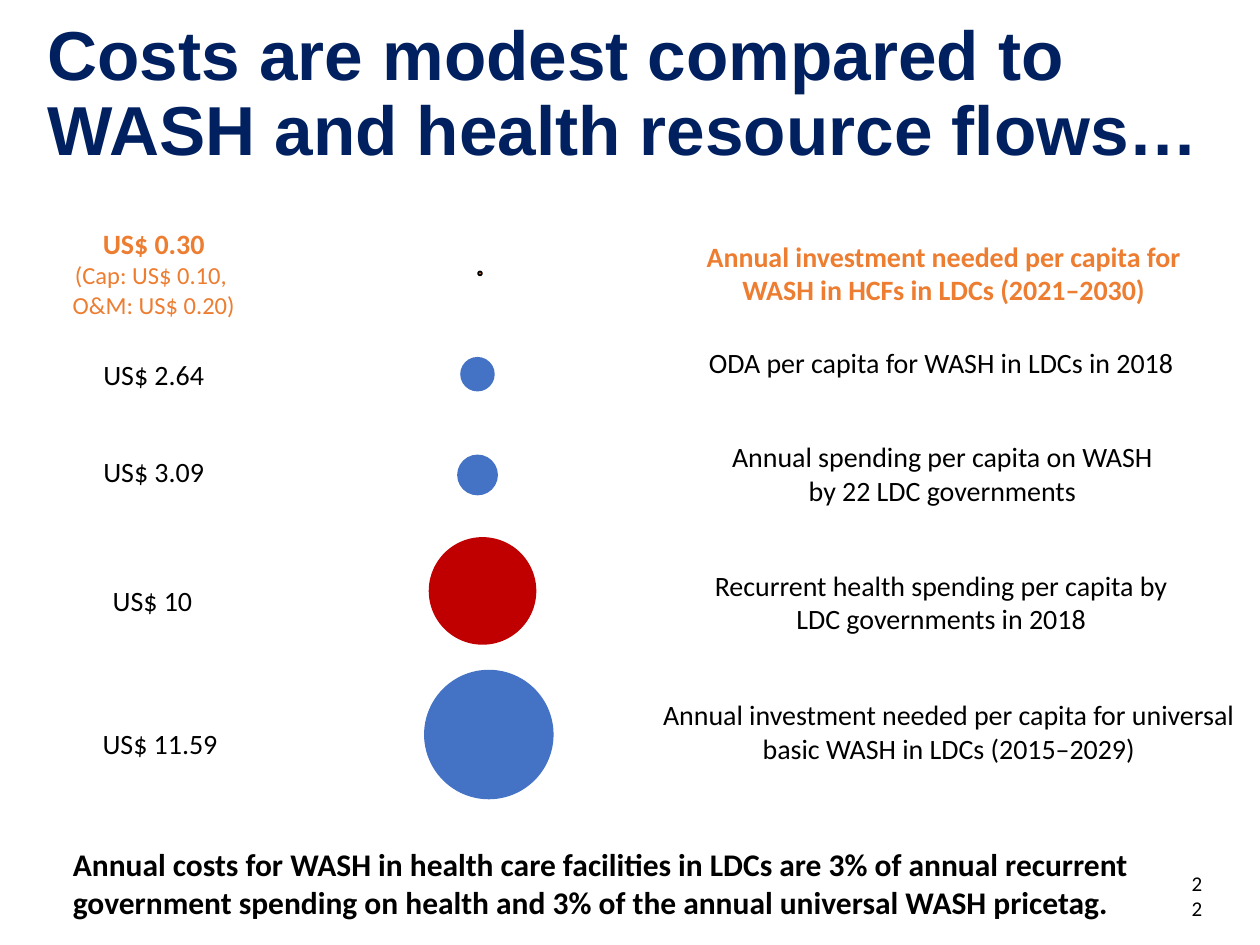
from pptx import Presentation
from pptx.dml.color import RGBColor
from pptx.enum.shapes import MSO_SHAPE
from pptx.enum.text import MSO_ANCHOR, PP_ALIGN
from pptx.util import Inches, Pt

NAVY = RGBColor(0x00, 0x20, 0x60)
ORANGE = RGBColor(0xED, 0x7D, 0x31)
BLUE = RGBColor(0x44, 0x72, 0xC4)
RED = RGBColor(0xC0, 0x00, 0x00)
BLACK = RGBColor(0x00, 0x00, 0x00)

TITLE = "Costs are modest compared to WASH and health resource flows…"
CLAIM = ("Annual costs for WASH in health care facilities in LDCs are 3% of annual "
         "recurrent government spending on health and 3% of the annual universal "
         "WASH pricetag.")
PAGE = "22"

# Each row: amount, (centre x, top), circle (centre x, centre y, size), fill,
# line, line width, label, (centre x, top, width), text colour, bold
ROWS = [
    ("US$ 0.30\n(Cap: US$ 0.10, \vO&M: US$ 0.20)", (1.22, 1.75),
     (3.81, 2.17, 0.03), ORANGE, BLACK, 1,
     "Annual investment needed per capita for WASH in HCFs in LDCs (2021–2030)",
     (7.49, 1.85, 4.48), ORANGE, True),
    ("US$ 2.64", (1.22, 2.79),
     (3.79, 2.97, 0.26), BLUE, BLUE, 1,
     "ODA per capita for WASH in LDCs in 2018",
     (7.47, 2.69, 4.78), BLACK, False),
    ("US$ 3.09", (1.22, 3.56),
     (3.79, 3.77, 0.31), BLUE, BLUE, 1,
     "Annual spending per capita on WASH by 22 LDC governments",
     (7.48, 3.44, 3.56), BLACK, False),
    ("US$ 10", (1.21, 4.58),
     (3.83, 4.69, 0.84), RED, RED, 1,
     "Recurrent health spending per capita by LDC governments in 2018",
     (7.47, 4.46, 4.02), BLACK, False),
    ("US$ 11.59", (1.27, 5.72),
     (3.88, 5.83, 1), BLUE, BLUE, 2,
     "Annual investment needed per capita for universal basic WASH in LDCs (2015–2029)",
     (7.53, 5.49, 4.78), BLACK, False),
]
SUM_W, LINE_H, PAD = 2.39, 0.27, 0.1

deck = Presentation()
deck.slide_width, deck.slide_height = Inches(10), Inches(7.5)
slide = deck.slides.add_slide(deck.slide_layouts[6])


def write(text, spot, size, color=BLACK, bold=False, align=PP_ALIGN.LEFT,
          face="Calibri", anchor=MSO_ANCHOR.TOP):
    box = slide.shapes.add_textbox(*map(Inches, spot))
    frame = box.text_frame
    frame.word_wrap = True
    frame.vertical_anchor = anchor
    frame.text = text
    for para in frame.paragraphs:
        para.alignment = align
        for run in para.runs:
            font = run.font
            font.name, font.size, font.bold = face, Pt(size), bold
            font.color.rgb = color
    return frame


def draw(mid, y, size, fill, edge, width):
    dot = slide.shapes.add_shape(
        MSO_SHAPE.OVAL, Inches(mid - size / 2), Inches(y - size / 2),
        Inches(size), Inches(size))
    dot.shadow.inherit = False
    dot.fill.solid()
    dot.fill.fore_color.rgb = fill
    dot.line.color.rgb = edge
    dot.line.width = Pt(width)


def place(text, mid, top, width, color, bold):
    high = 2 * LINE_H + PAD
    return write(text, (mid - width / 2, top, width, high), 16, color, bold,
                 PP_ALIGN.CENTER)


head = write(TITLE, (0.28, 0.36, 9.49, 0.79), 39.6, NAVY, True,
             face="Arial", anchor=MSO_ANCHOR.MIDDLE)
head.paragraphs[0].line_spacing = 0.9

for cost, (mid, top), ball, fill, edge, width, label, spot, color, bold in ROWS:
    draw(*ball, fill, edge, width)
    sums = place(cost, mid, top, SUM_W, color, bold)
    for para in sums.paragraphs[1:]:
        for run in para.runs:
            run.font.size, run.font.bold = Pt(14), False
    place(label, *spot, color, bold)

write(CLAIM, (0.48, 6.66, 8.77, 0.71), 18, bold=True)
write(PAGE, (9.36, 7.01, 0.24, 0.2), 12, align=PP_ALIGN.RIGHT,
      anchor=MSO_ANCHOR.MIDDLE)

deck.save("out.pptx")
